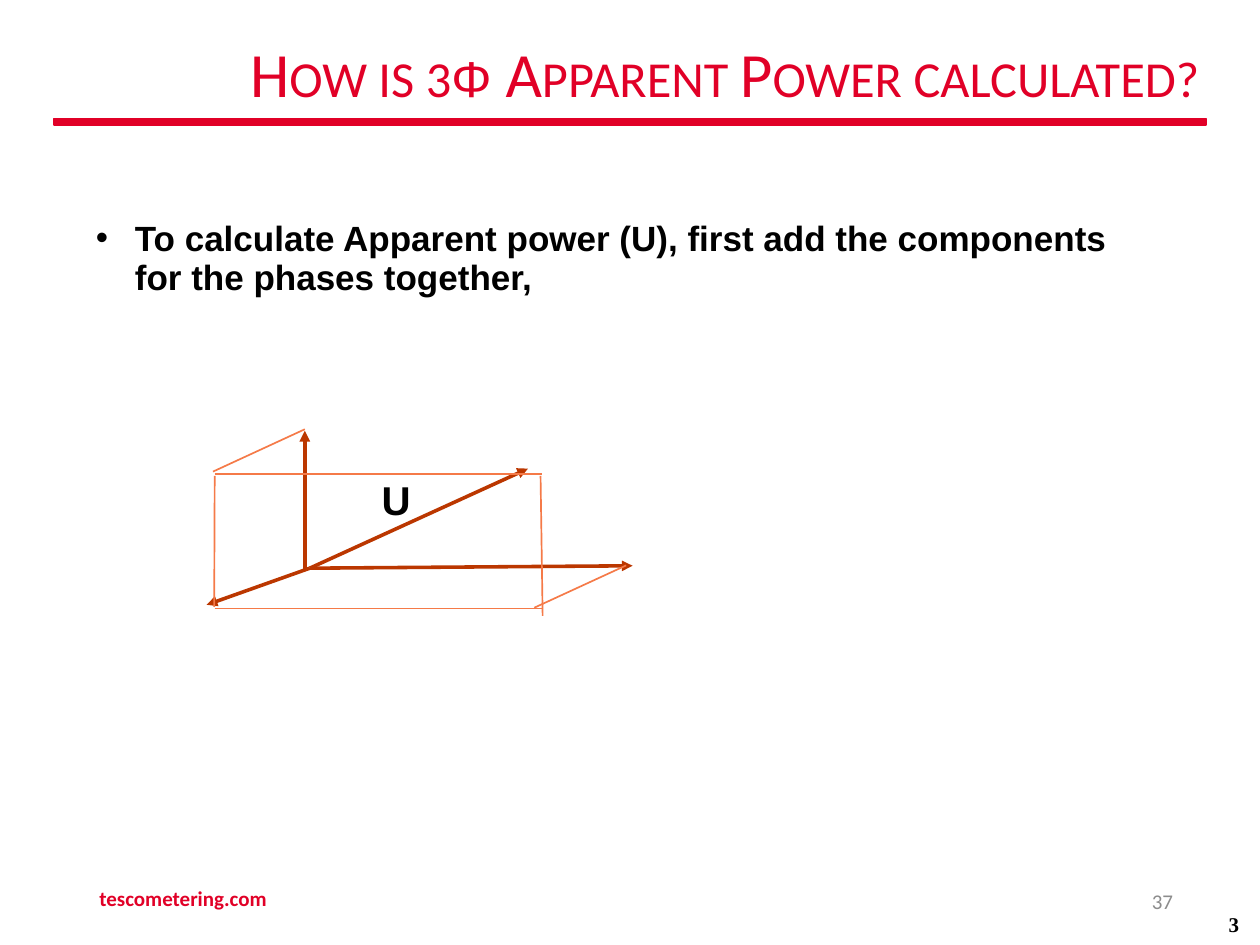
from pptx import Presentation
from pptx.dml.color import RGBColor
from pptx.enum.shapes import MSO_CONNECTOR, MSO_SHAPE
from pptx.enum.text import MSO_ANCHOR, PP_ALIGN
from pptx.oxml.ns import qn
from pptx.util import Pt
from lxml.etree import SubElement

COLORS = {"red": "E10027", "vector": "BB3700", "guide": "F57A48",
          "black": "000000", "gray": "8C8C8C"}


def rgb(name):
    return RGBColor.from_string(COLORS[name])


def write(paragraph, text, font="Arial", size=12, color="black", bold=False, small_caps=False):
    run = paragraph.add_run()
    run.text = text
    run.font.name, run.font.size, run.font.bold = font, Pt(size), bold
    run.font.color.rgb = rgb(color)
    if small_caps:
        run.font._element.set("cap", "small")


class PowerSlide:
    """Hold the style and the current slide, and draw each kind of element."""

    def __init__(self, slide):
        self.shapes = slide.shapes

    def bar(self, left, top, width, height, color):
        bar = self.shapes.add_shape(MSO_SHAPE.RECTANGLE, Pt(left), Pt(top), Pt(width), Pt(height))
        bar.shadow.inherit = False
        bar.fill.solid()
        bar.fill.fore_color.rgb = rgb(color)
        bar.line.color.rgb = rgb(color)
        bar.line.width = Pt(1)

    def text(self, box, runs, align=PP_ALIGN.LEFT, anchor=MSO_ANCHOR.TOP,
             margins=(0, 0, 0, 0), spacing=None, bullet=None, indent=0, **style):
        frame = self.shapes.add_textbox(*map(Pt, box)).text_frame
        frame.word_wrap = True
        frame.vertical_anchor = anchor
        (frame.margin_left, frame.margin_top,
         frame.margin_right, frame.margin_bottom) = map(Pt, margins)
        paragraph = frame.paragraphs[0]
        paragraph.alignment = align
        if spacing:
            paragraph.line_spacing = Pt(spacing)
        properties = paragraph._p.get_or_add_pPr()
        properties.set("marL", str(Pt(indent)))
        if bullet:
            properties.set("indent", str(Pt(-22.3)))
            SubElement(properties, qn("a:buFont"), typeface="Arial")
            SubElement(properties, qn("a:buChar"), char=bullet)
        for text, font in runs:
            write(paragraph, text, font=font, **style)

    def line(self, start, end, color, width):
        line = self.shapes.add_connector(MSO_CONNECTOR.STRAIGHT, *map(Pt, start + end))
        line.line.color.rgb = rgb(color)
        line.line.width = Pt(width)
        SubElement(line._element.spPr, qn("a:effectLst"))
        return line

    def guide(self, start, end):
        self.line(start, end, "guide", 0.96)

    def vector(self, start, tip):
        vector = self.line(start, tip, "vector", 2.04)
        SubElement(vector.line._get_or_add_ln(), qn("a:tailEnd"), type="triangle")


def main():
    deck = Presentation()
    deck.slide_width, deck.slide_height = Pt(720), Pt(540)
    slide = PowerSlide(deck.slides.add_slide(deck.slide_layouts[6]))

    slide.bar(31, 67.7, 658, 3.6, "red")
    slide.text((104.4, 18.7, 581, 44.6),
               [("How is 3", "Calibri"), ("ϕ ", "Arial"),
                ("Apparent Power calculated?", "Calibri")],
               align=PP_ALIGN.RIGHT, anchor=MSO_ANCHOR.MIDDLE, margins=(0, 1, 0, 0),
               size=36, color="red", small_caps=True)
    slide.text((508.3, 500.4, 162, 28.8), [("37", "Calibri")], align=PP_ALIGN.RIGHT,
               anchor=MSO_ANCHOR.MIDDLE, spacing=14.2, color="gray")
    slide.text((53.3, 121.7, 581, 49),
               [("To calculate Apparent power (U), first add the components "
                 "for the phases together,", "Arial")],
               margins=(0, 3, 0, 0), spacing=22.8, bullet="•", indent=23.8,
               size=20, bold=True)

    origin = (177, 324.7)
    slide.vector(origin, (301.7, 267.8))
    slide.vector(origin, (361.5, 323.3))
    slide.vector(origin, (118.1, 345.6))
    slide.vector((174.2, 326), (174.2, 246.2))

    left, right, top, bottom = 122.7, 309.6, 271, 347.8
    for level in (top, bottom):
        slide.guide((left, level), (right, level))
    slide.guide((left, top + 1), (left - 0.3, bottom - 1))
    slide.guide((right - 0.7, top + 1), (right + 0.5, 352))
    depth = (52.5, 24.2)
    for x, y in ((121.7, 269.5), (305.3, 347.3)):
        slide.guide((x, y), (x + depth[0], y - depth[1]))

    slide.text((175, 270.7, 134, 29.5), [("U", "Arial")], margins=(0, 1, 0, 0),
               indent=43, size=23, bold=True)
    slide.text((702, 521.3, 12, 15.1), [("3", "Times New Roman")], spacing=14.1, bold=True)
    slide.text((49.7, 499, 243.4, 28.8), [("tescometering.com", "Calibri")],
               anchor=MSO_ANCHOR.MIDDLE, margins=(7.2, 3.6, 7.2, 3.6),
               color="red", bold=True)
    deck.save("out.pptx")


if __name__ == "__main__":
    main()
